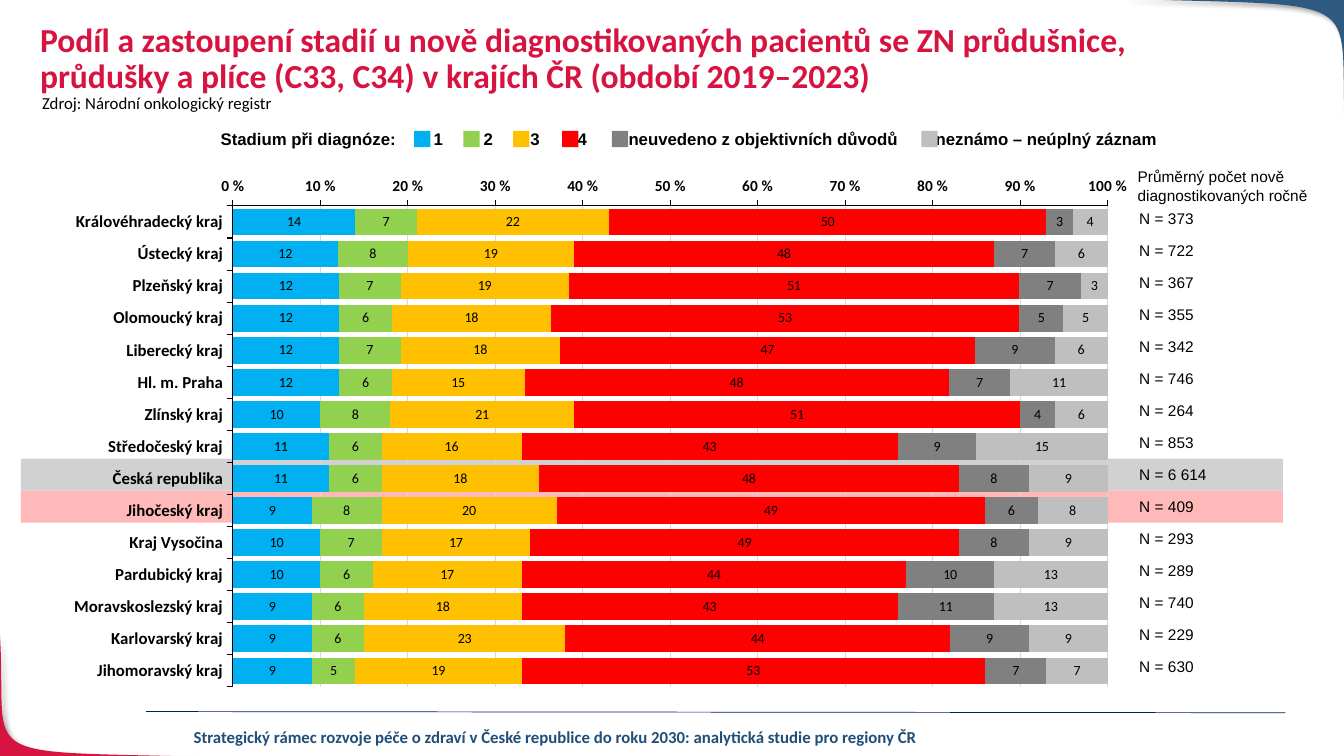
from lxml.etree import SubElement
from pptx import Presentation
from pptx.chart.data import CategoryChartData
from pptx.dml.color import RGBColor
from pptx.enum.chart import XL_CHART_TYPE as ChartType, XL_LABEL_POSITION as LabelPosition, XL_TICK_MARK as TickMark
from pptx.enum.shapes import MSO_CONNECTOR as Connector, MSO_SHAPE as Shape
from pptx.enum.text import MSO_ANCHOR as Anchor, PP_ALIGN as Align
from pptx.oxml import parse_xml
from pptx.oxml.ns import nsdecls, qn
from pptx.util import Cm, Pt

COLORS = {
    "black": "000000", "crimson": "D71440", "blue": "2E5980", "navy": "002060",
    "footer": "1F4E79", "country": "D1D1D1", "region": "FFB9B9", "grid": "D9D9D9",
}
TITLE = ("Podíl a zastoupení stadií u nově diagnostikovaných pacientů se ZN průdušnice, "
         "průdušky a plíce (C33, C34) v krajích ČR (období 2019–2023)")
SOURCE = "Zdroj: Národní onkologický registr"
FOOTER = "Strategický rámec rozvoje péče o zdraví v České republice do roku 2030: analytická studie pro regiony ČR"
LEGEND_TITLE = "Stadium při diagnóze:"
COUNT_HEADING = "Průměrný počet nově diagnostikovaných ročně"

STAGES = [
    ("1", "00B0F0", 10.44, 5.37),
    ("2", "92D050", 11.68, 6.63),
    ("3", "FFC000", 12.93, 7.81),
    ("4", "FF0000", 14.17, 9.0),
    ("neuvedeno z objektivních důvodů", "808080", 15.42, 10.28),
    ("neznámo – neúplný záznam", "BFBFBF", 23.22, 18.02),
]
REGIONS = [
    ("Královéhradecký kraj", (14, 7, 22, 50, 3, 4), "373"),
    ("Ústecký kraj", (12, 8, 19, 48, 7, 6), "722"),
    ("Plzeňský kraj", (12, 7, 19, 51, 7, 3), "367"),
    ("Olomoucký kraj", (12, 6, 18, 53, 5, 5), "355"),
    ("Liberecký kraj", (12, 7, 18, 47, 9, 6), "342"),
    ("Hl. m. Praha", (12, 6, 15, 48, 7, 11), "746"),
    ("Zlínský kraj", (10, 8, 21, 51, 4, 6), "264"),
    ("Středočeský kraj", (11, 6, 16, 43, 9, 15), "853"),
    ("Česká republika", (11, 6, 18, 48, 8, 9), "6 614"),
    ("Jihočeský kraj", (9, 8, 20, 49, 6, 8), "409"),
    ("Kraj Vysočina", (10, 7, 17, 49, 8, 9), "293"),
    ("Pardubický kraj", (10, 6, 17, 44, 10, 13), "289"),
    ("Moravskoslezský kraj", (9, 6, 18, 43, 11, 13), "740"),
    ("Karlovarský kraj", (9, 6, 23, 44, 9, 9), "229"),
    ("Jihomoravský kraj", (9, 5, 19, 53, 7, 7), "630"),
]
HIGHLIGHTS = {"Česká republika": "country", "Jihočeský kraj": "region"}
CORNERS = [
    ("crimson", [(5.41, 19.08), (-0.86, 18.9), (0.2, 19.28), (0, 16)], (-0.03, 19.08)),
    ("blue", [(28.22, -0.03), (34.8, 0.18), (33.68, -0.25), (33.91, 3.61)], (33.91, -0.03)),
]
PLOT_AREA = {"x": 0.16, "y": 0.07, "w": 0.8, "h": 0.9}
PLOT_AREA = {"x": 0.1645, "y": 0.0746, "w": 0.797, "h": 0.904}
TABLE_TOP, TABLE_HEIGHT = 5.11, 12.09
ROW_HEIGHT = TABLE_HEIGHT / len(REGIONS)


def rgb(value):
    return RGBColor.from_string(COLORS.get(value, value))


def set_font(font, size, name="Calibri", color="black", bold=False):
    font.size, font.name, font.bold = Pt(size), name, bold
    font.color.rgb = rgb(color)


def write(frame, text, align=Align.LEFT, spacing=None, tabs=(), margins=None, wrap=True, **font):
    frame.word_wrap = wrap
    if margins is not None:
        frame.margin_left = frame.margin_right = frame.margin_top = frame.margin_bottom = Cm(margins)
    paragraph = frame.paragraphs[0]
    paragraph.text = text
    paragraph.alignment = align
    if spacing:
        paragraph.line_spacing = spacing
    if tabs:
        tab_list = SubElement(paragraph._p.get_or_add_pPr(), qn("a:tabLst"))
        for position in tabs:
            SubElement(tab_list, qn("a:tab"), pos=str(Cm(position)), algn="l")
    set_font(paragraph.runs[0].font if not tabs else paragraph.font, **font)
    for run in paragraph.runs:
        set_font(run.font, **font)


def add_text(slide, box, text, **options):
    shape = slide.shapes.add_textbox(*map(Cm, box))
    write(shape.text_frame, text, **options)


def paint(shape, color):
    shape.shadow.inherit = False
    shape.fill.solid()
    shape.fill.fore_color.rgb = rgb(color)
    shape.line.fill.background()


def add_rectangle(slide, box, color):
    paint(slide.shapes.add_shape(Shape.RECTANGLE, *map(Cm, box)), color)


def curve_point(controls, t):
    weights = ((1 - t) ** 3, 3 * t * (1 - t) ** 2, 3 * t ** 2 * (1 - t), t ** 3)
    return tuple(Cm(sum(w * point[axis] for w, point in zip(weights, controls))) for axis in (0, 1))


def add_corner(slide, color, controls, corner):
    points = [curve_point(controls, step / 40) for step in range(41)]
    builder = slide.shapes.build_freeform(*points[0])
    builder.add_line_segments(points[1:] + [tuple(map(Cm, corner))], close=True)
    shape = builder.convert_to_shape()
    paint(shape, color)
    shape._element.spPr.find(qn("a:effectLst")).append(parse_xml(
        f'<a:outerShdw {nsdecls("a")} blurRad="{Pt(4)}" dist="{Pt(3)}" dir="2700000" algn="tl">'
        f'<a:srgbClr val="{COLORS["black"]}"><a:alpha val="40000"/></a:srgbClr></a:outerShdw>'))


def add_footer_line(slide):
    line = slide.shapes.add_connector(Connector.STRAIGHT, Cm(3.68), Cm(17.93), Cm(32.39), Cm(17.96))
    line.line.color.rgb = rgb("navy")
    line.line.width = Pt(0.5)
    SubElement(line._element.spPr, qn("a:effectLst"))


def style_axis(axis, size):
    axis.major_tick_mark, axis.minor_tick_mark = TickMark.OUTSIDE, TickMark.NONE
    axis.format.line.color.rgb = rgb("black")
    axis.format.line.width = Pt(0.75)
    set_font(axis.tick_labels.font, size, bold=True)


def add_stage_chart(slide):
    data = CategoryChartData(number_format="#,##0")
    data.categories = [name for name, _, _ in REGIONS]
    for index, stage in enumerate(STAGES):
        data.add_series(stage[0], [values[index] for _, values, _ in REGIONS])
    box = map(Cm, (1.32, 4.19, 27.66, 13.41))
    chart = slide.shapes.add_chart(ChartType.BAR_STACKED_100, *box, data).chart
    chart.has_legend = chart.has_title = False
    set_font(chart.font, 8)
    plot = chart.plots[0]
    plot.gap_width, plot.overlap, plot.vary_by_categories = 20, 100, False
    for series, stage in zip(plot.series, STAGES):
        series.format.fill.solid()
        series.format.fill.fore_color.rgb = rgb(stage[1])
        labels = series.data_labels
        labels.show_value = True
        labels.number_format, labels.number_format_is_linked = "#,##0", False
        labels.position = LabelPosition.CENTER
        set_font(labels.font, 10)
    style_axis(chart.category_axis, 12)
    chart.category_axis.reverse_order = True
    axis = chart.value_axis
    style_axis(axis, 11)
    axis.minimum_scale, axis.maximum_scale, axis.major_unit = 0, 1, 0.1
    axis.tick_labels.number_format, axis.tick_labels.number_format_is_linked = "0\\ %", False
    axis.major_gridlines.format.line.color.rgb = rgb("grid")
    axis.major_gridlines.format.line.width = Pt(0.75)
    area = chart._chartSpace.chart.plotArea
    for layout in area.findall(qn("c:layout")):
        area.remove(layout)
    sizes = "".join(f'<c:{key} val="{value}"/>' for key, value in PLOT_AREA.items())
    area.insert(0, parse_xml(
        f'<c:layout {nsdecls("c")}><c:manualLayout><c:layoutTarget val="inner"/>'
        f'<c:xMode val="edge"/><c:yMode val="edge"/>{sizes}</c:manualLayout></c:layout>'))


def add_count_table(slide):
    box = map(Cm, (28.68, TABLE_TOP, 2.51, TABLE_HEIGHT))
    table = slide.shapes.add_table(len(REGIONS), 1, *box).table
    table.first_row = table.horz_banding = False
    table._tbl.tblPr.find(qn("a:tableStyleId")).text = "{2D5ABB26-0587-4C30-8999-92F81FD0307C}"
    for row, (_, _, count) in enumerate(REGIONS):
        table.rows[row].height = Cm(ROW_HEIGHT)
        cell = table.cell(row, 0)
        cell.fill.background()
        cell.vertical_anchor = Anchor.MIDDLE
        cell.margin_left = cell.margin_right = cell.margin_top = Cm(0.03)
        cell.margin_bottom = 0
        write(cell.text_frame, f"N = {count}", size=11, name="Arial")


def main():
    presentation = Presentation()
    presentation.slide_width, presentation.slide_height = Cm(33.87), Cm(19.05)
    slide = presentation.slides.add_slide(presentation.slide_layouts[6])
    for corner in CORNERS:
        add_corner(slide, *corner)
    add_footer_line(slide)
    add_text(slide, (2.57, 18.19, 22.86, 0.76), FOOTER, align=Align.CENTER, size=12, color="footer", bold=True)
    for row, (name, _, _) in enumerate(REGIONS):
        if name in HIGHLIGHTS:
            add_rectangle(slide, (0.53, TABLE_TOP + row * ROW_HEIGHT, 31.8, ROW_HEIGHT), HIGHLIGHTS[name])
    add_text(slide, (0.76, 0.46, 29.21, 1.5), TITLE, spacing=0.9, size=24, color="crimson", bold=True)
    add_stage_chart(slide)
    add_text(slide, (5.56, 3.25, 24.21, 0.51), "\t".join([LEGEND_TITLE] + [stage[0] for stage in STAGES]),
             tabs=[stage[3] for stage in STAGES], margins=0, size=12, name="Arial", bold=True)
    for _, color, left, _ in STAGES:
        add_rectangle(slide, (left, 3.3, 0.41, 0.41), color)
    add_text(slide, (28.42, 4.09, 5, 1.19), COUNT_HEADING, size=11, name="Arial")
    add_count_table(slide)
    add_text(slide, (0.81, 2.21, 6.4, 0.76), SOURCE, wrap=False, size=12)
    presentation.save("out.pptx")


if __name__ == "__main__":
    main()
